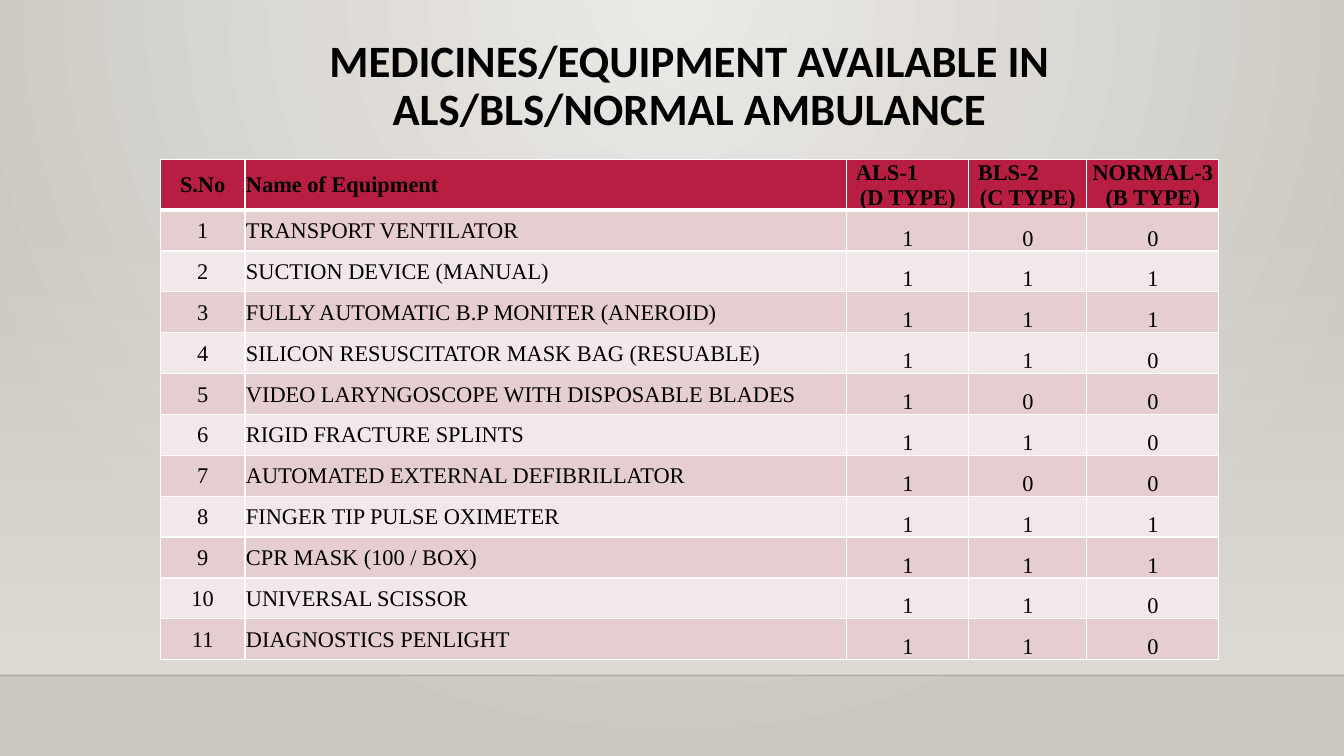
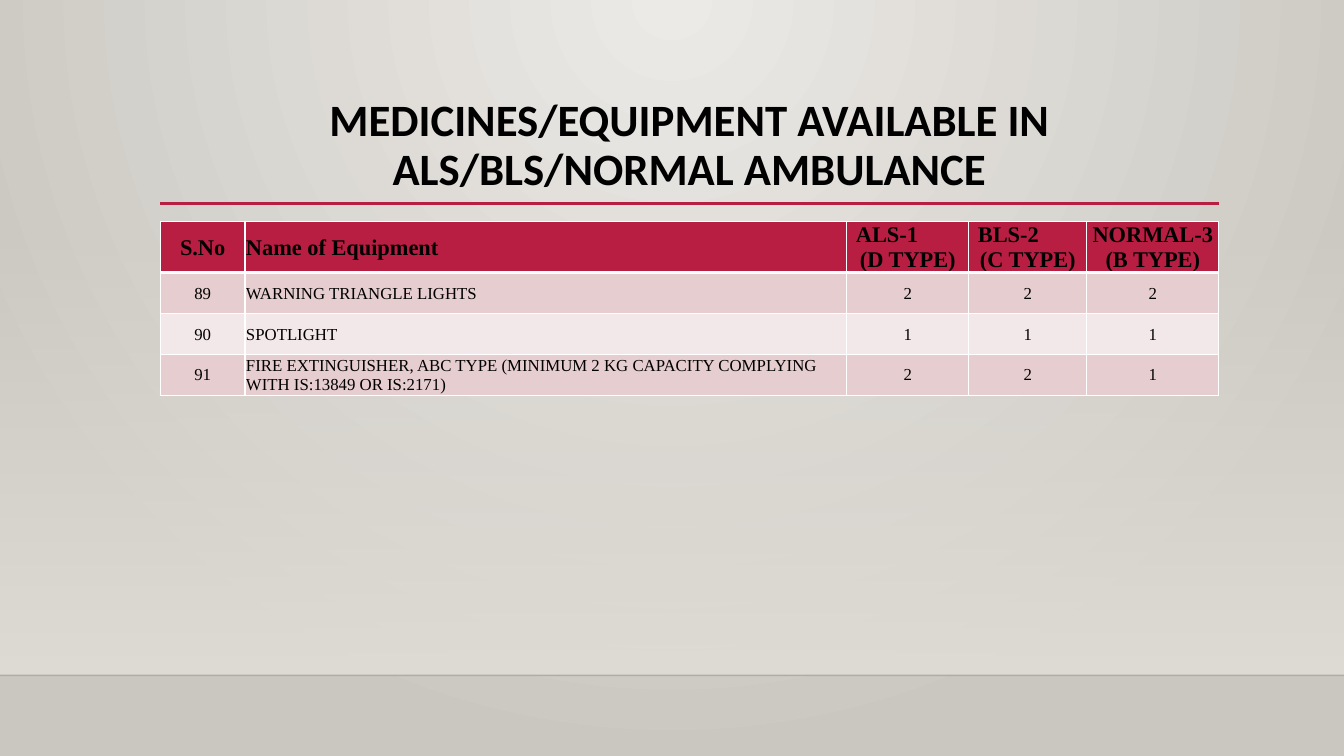
from dataclasses import dataclass

import lxml.etree
import pptx
import pptx.dml.color
import pptx.dml.fill
import pptx.enum.dml
import pptx.enum.shapes
import pptx.enum.text
import pptx.oxml.ns
import pptx.presentation
import pptx.shapes.connector
import pptx.slide
import pptx.table
import pptx.util
from pptx.util import Inches

BLACK = "000000"
WHITE = "FFFFFF"
CRIMSON = "B71E42"
ROSE = "E6CDCF"
PALE_ROSE = "F3E8E9"
STONE = "DFDBD5"
TITLE_FONT = "Calibri"
TABLE_FONT = "Times New Roman"

TITLE = "MEDICINES/EQUIPMENT AVAILABLE IN ALS/BLS/NORMAL AMBULANCE"
SLIDE_WIDTH = 13.33
CONTENT_LEFT = 1.59
CONTENT_WIDTH = 10.5
FLOOR_TOP = 6.7
BAND_TOP = 2.21
RULE_TOP = 2.02
COLUMN_WIDTHS = (0.84, 5.97, 1.21, 1.17, 1.31)
ROW_HEIGHT = Inches(4.87) // 12
NAME_COLUMN = 1
LAST_COLUMN = len(COLUMN_WIDTHS) - 1

MIDDLE = pptx.enum.text.MSO_ANCHOR.MIDDLE
BOTTOM = pptx.enum.text.MSO_ANCHOR.BOTTOM
LEFT = pptx.enum.text.PP_ALIGN.LEFT
CENTER = pptx.enum.text.PP_ALIGN.CENTER


@dataclass(frozen=True)
class Heading:
    text: str
    indent: float | None = None
    anchor: pptx.enum.text.MSO_ANCHOR = MIDDLE


@dataclass(frozen=True)
class Equipment:
    name: str
    als: int
    bls: int
    normal: int


@dataclass(frozen=True)
class EquipmentSlide:
    title_top: float
    table_top: float
    first_number: int
    font_size: int
    value_anchor: pptx.enum.text.MSO_ANCHOR
    items: tuple[Equipment, ...]


HEADINGS = (
    Heading("S.No"),
    Heading("Name of Equipment", indent=0),
    Heading("ALS-1\n(D TYPE)", indent=0.08),
    Heading("BLS-2\n(C TYPE)", indent=0.08),
    Heading("NORMAL-3\n(B TYPE)", anchor=BOTTOM),
)

EQUIPMENT_SLIDES = (
    EquipmentSlide(0.29, 1.58, 1, 16, BOTTOM, (
        Equipment("TRANSPORT VENTILATOR", 1, 0, 0),
        Equipment("SUCTION DEVICE (MANUAL)", 1, 1, 1),
        Equipment("FULLY AUTOMATIC B.P MONITER (ANEROID)", 1, 1, 1),
        Equipment("SILICON RESUSCITATOR MASK BAG (RESUABLE)", 1, 1, 0),
        Equipment("VIDEO LARYNGOSCOPE WITH DISPOSABLE BLADES", 1, 0, 0),
        Equipment("RIGID FRACTURE SPLINTS", 1, 1, 0),
        Equipment("AUTOMATED EXTERNAL DEFIBRILLATOR", 1, 0, 0),
        Equipment("FINGER TIP PULSE OXIMETER", 1, 1, 1),
        Equipment("CPR MASK (100 / BOX)", 1, 1, 1),
        Equipment("UNIVERSAL SCISSOR", 1, 1, 0),
        Equipment("DIAGNOSTICS PENLIGHT", 1, 1, 0),
    )),
    EquipmentSlide(0.88, 2.2, 89, 12, MIDDLE, (
        Equipment("WARNING TRIANGLE LIGHTS", 2, 2, 2),
        Equipment("SPOTLIGHT", 1, 1, 1),
        Equipment(
            "FIRE EXTINGUISHER, ABC TYPE (MINIMUM 2 KG CAPACITY COMPLYING WITH IS:13849 OR IS:2171)",
            2, 2, 1,
        ),
    )),
)


def color(value: str) -> pptx.dml.color.RGBColor:
    return pptx.dml.color.RGBColor.from_string(value)


def add_child(parent: lxml.etree._Element, tag: str, **attributes: str) -> lxml.etree._Element:
    return lxml.etree.SubElement(parent, pptx.oxml.ns.qn(tag), **attributes)


def set_opacity(element: lxml.etree._Element, percent: int) -> None:
    first_color = next(element.iter(pptx.oxml.ns.qn("a:srgbClr")))
    add_child(first_color, "a:alpha", val=str(percent * 1000))


def set_gradient(fill: pptx.dml.fill.FillFormat, *colors: str) -> None:
    fill.gradient()
    fill.gradient_angle = 270
    for stop, value, position in zip(fill.gradient_stops, colors, (0, 1)):
        stop.color.rgb = color(value)
        stop.position = position


def style_background(layout: pptx.slide.SlideLayout) -> None:
    set_gradient(layout.background.fill, "ECEAE7", "CAC7C1")
    linear = next(layout.element.iter(pptx.oxml.ns.qn("a:lin")))
    gradient = linear.getparent()
    gradient.remove(linear)
    circle = add_child(gradient, "a:path", path="circle")
    add_child(circle, "a:fillToRect", l="43000", t="0", r="43000", b="100000")


def add_rule(
    slide: pptx.slide.Slide, left: float, top: float, width: float, value: str, points: float
) -> pptx.shapes.connector.Connector:
    rule = slide.shapes.add_connector(
        pptx.enum.shapes.MSO_CONNECTOR.STRAIGHT,
        Inches(left), Inches(top), Inches(left + width), Inches(top),
    )
    rule.line.color.rgb = color(value)
    rule.line.width = pptx.util.Pt(points)
    add_child(rule.element.spPr, "a:effectLst")
    return rule


def move_backdrop_to_layout(slide: pptx.slide.Slide, layout: pptx.slide.SlideLayout) -> None:
    band = slide.shapes.add_shape(
        pptx.enum.shapes.MSO_SHAPE.RECTANGLE,
        0, Inches(BAND_TOP), Inches(SLIDE_WIDTH), Inches(FLOOR_TOP - BAND_TOP),
    )
    band.shadow.inherit = False
    band.line.fill.background()
    set_gradient(band.fill, STONE, STONE)
    set_opacity(band.element, 0)
    floor_edge = add_rule(slide, 0, FLOOR_TOP, SLIDE_WIDTH, "000001", 1)
    set_opacity(floor_edge.element, 20)
    title_rule = add_rule(slide, CONTENT_LEFT, RULE_TOP, CONTENT_WIDTH, CRIMSON, 2.5)
    for position, shape in enumerate((band, floor_edge, title_rule), start=2):
        layout.shapes.element.insert(position, shape.element)


def add_title(slide: pptx.slide.Slide, top: float) -> None:
    title = slide.shapes.title
    title.left, title.top = Inches(CONTENT_LEFT), Inches(top)
    title.width, title.height = Inches(CONTENT_WIDTH), Inches(1.15)
    title.text_frame.text = TITLE
    title.text_frame.vertical_anchor = MIDDLE
    paragraph = title.text_frame.paragraphs[0]
    paragraph.alignment = CENTER
    paragraph.line_spacing = 0.9
    font = paragraph.runs[0].font
    font.name, font.size, font.bold = TITLE_FONT, pptx.util.Pt(32), True
    font.color.rgb = color(BLACK)


def set_borders(cell: pptx.table._Cell, top: int, bottom: int) -> None:
    properties = cell._tc.get_or_add_tcPr()
    widths = {"a:lnL": 1, "a:lnR": 1, "a:lnT": top, "a:lnB": bottom}
    for position, (tag, points) in enumerate(widths.items()):
        border = add_child(properties, tag, w=str(pptx.util.Pt(points)))
        add_child(add_child(border, "a:solidFill"), "a:srgbClr", val=WHITE)
        properties.insert(position, border)


def fill_cell(
    cell: pptx.table._Cell,
    text: str,
    background: str,
    size: int,
    bold: bool,
    anchor: pptx.enum.text.MSO_ANCHOR,
    indent: float | None,
) -> None:
    cell.fill.solid()
    cell.fill.fore_color.rgb = color(background)
    cell.margin_left = cell.margin_right = cell.margin_top = Inches(0.01)
    cell.margin_bottom = 0
    cell.vertical_anchor = anchor
    cell.text_frame.text = text
    for paragraph in cell.text_frame.paragraphs:
        paragraph.alignment = CENTER
        for run in paragraph.runs:
            font = run.font
            font.name, font.size, font.bold = TABLE_FONT, pptx.util.Pt(size), bold
            font.color.rgb = color(BLACK)
    if indent is not None:
        first = cell.text_frame.paragraphs[0]
        first.alignment = LEFT
        first._p.get_or_add_pPr().set("marL", str(Inches(indent)))


def add_equipment_table(slide: pptx.slide.Slide, content: EquipmentSlide) -> None:
    row_count = len(content.items) + 1
    table = slide.shapes.add_table(
        row_count, len(COLUMN_WIDTHS),
        Inches(CONTENT_LEFT), Inches(content.table_top),
        Inches(CONTENT_WIDTH), ROW_HEIGHT * row_count,
    ).table
    for column, width in zip(table.columns, COLUMN_WIDTHS):
        column.width = Inches(width)
    for row in table.rows:
        row.height = ROW_HEIGHT
    for column, heading in enumerate(HEADINGS):
        cell = table.cell(0, column)
        fill_cell(cell, heading.text, CRIMSON, 16, True, heading.anchor, heading.indent)
        set_borders(cell, top=1, bottom=3)
    for row, item in enumerate(content.items, start=1):
        number = content.first_number + row - 1
        background = ROSE if row % 2 else PALE_ROSE
        for column, value in enumerate((number, item.name, item.als, item.bls, item.normal)):
            cell = table.cell(row, column)
            anchor = content.value_anchor if column > NAME_COLUMN else MIDDLE
            indent = 0 if column == NAME_COLUMN else None
            fill_cell(cell, str(value), background, content.font_size, False, anchor, indent)
            set_borders(cell, top=3 if row == 1 else 1, bottom=1)


def prepare_layout(presentation: pptx.presentation.Presentation) -> pptx.slide.SlideLayout:
    layout = presentation.slide_layouts.get_by_name("Title Only")
    for placeholder in list(layout.placeholders):
        if placeholder.placeholder_format.idx != 0:
            layout.shapes.element.remove(placeholder.element)
    style_background(layout)
    return layout


def main() -> None:
    presentation = pptx.Presentation()
    presentation.slide_width = Inches(SLIDE_WIDTH)
    presentation.slide_height = Inches(7.5)
    layout = prepare_layout(presentation)
    for position, content in enumerate(EQUIPMENT_SLIDES):
        slide = presentation.slides.add_slide(layout)
        if position == 0:
            move_backdrop_to_layout(slide, layout)
        add_title(slide, content.title_top)
        add_equipment_table(slide, content)
    presentation.save("out.pptx")


if __name__ == "__main__":
    main()
